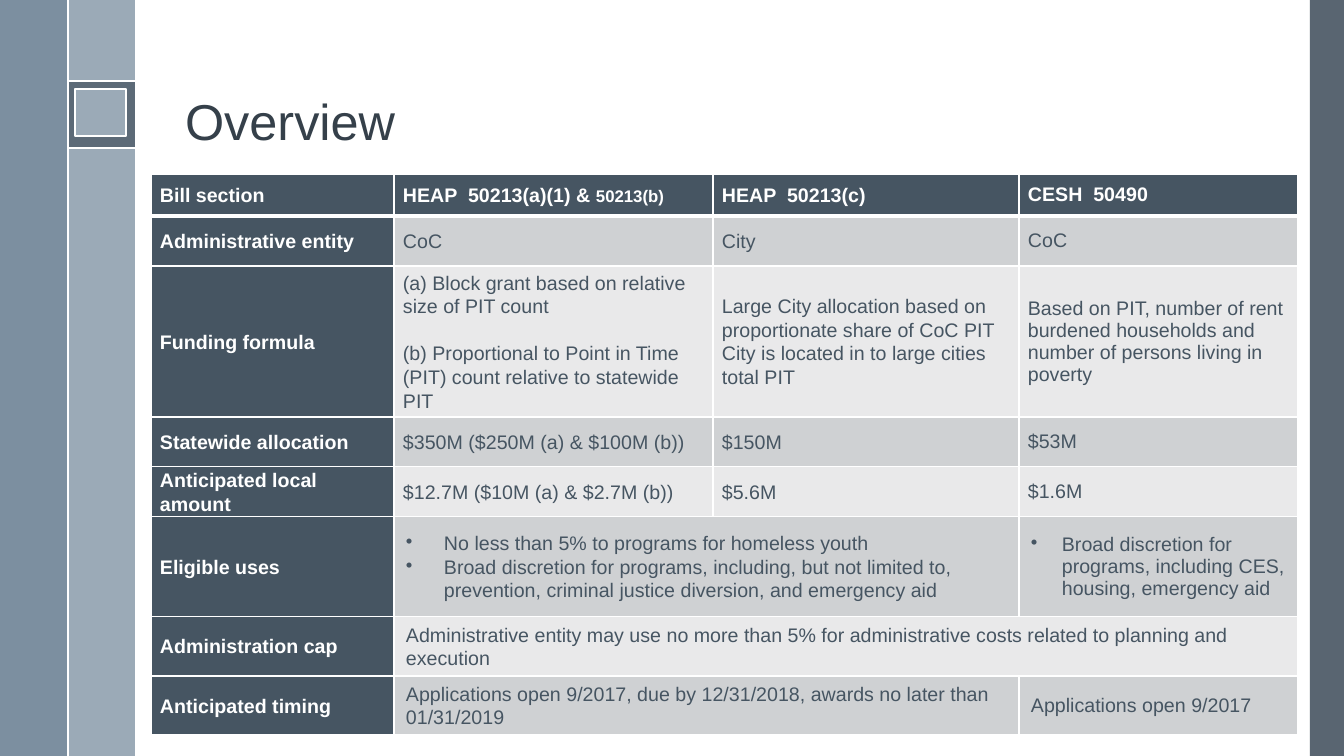
from lxml import etree
from pptx import Presentation
from pptx.dml.color import RGBColor
from pptx.enum.shapes import MSO_CONNECTOR, MSO_SHAPE
from pptx.enum.text import MSO_ANCHOR, MSO_AUTO_SIZE, PP_ALIGN
from pptx.oxml.ns import qn
from pptx.util import Pt

PX = 9071.43  # EMU per px, at 100.8 px to the inch
TITLE_ONLY = 5
RECT = MSO_SHAPE.RECTANGLE
STRAIGHT = MSO_CONNECTOR.STRAIGHT
MIDDLE, BOTTOM = MSO_ANCHOR.MIDDLE, MSO_ANCHOR.BOTTOM
NO_FIT = MSO_AUTO_SIZE.NONE
LEFT = PP_ALIGN.LEFT

WHITE = RGBColor(0xFF, 0xFF, 0xFF)
INK = RGBColor(0x35, 0x40, 0x4A)
SLATE = RGBColor(0x46, 0x55, 0x62)
BAR_DARK = RGBColor(0x47, 0x55, 0x62)
BAR_BLUE = RGBColor(0x6A, 0x80, 0x93)
BAR_LIGHT = RGBColor(0x9B, 0xAA, 0xB7)
BAND_DARK = RGBColor(0xCF, 0xD1, 0xD3)
BAND_LIGHT = RGBColor(0xE9, 0xE9, 0xEA)

COL_WIDTHS = [243, 319, 306, 279]
ROW_HEIGHTS = [42, 50, 151, 50, 50, 100, 59, 59]
FIRST_ROOMY_ROW = 5  # from here on, value cells have wider margins
BULLET_ROW = 5
# None continues the cell to its left
ROWS = [
    ["Bill section", "HEAP  50213(a)(1) & ", "HEAP  50213(c)", "CESH  50490"],
    ["Administrative entity", "CoC", "City", "CoC"],
    ["Funding formula",
     "(a) Block grant based on relative size of PIT count\n"
     "(b) Proportional to Point in Time (PIT) count relative to statewide PIT",
     "Large City allocation based on proportionate share of CoC PIT City is "
     "located in to large cities total PIT",
     "Based on PIT, number of rent burdened households and number of persons "
     "living in poverty"],
    ["Statewide allocation", "$350M ($250M (a) & $100M (b))", "$150M", "$53M"],
    ["Anticipated local amount", "$12.7M ($10M (a) & $2.7M (b))", "$5.6M", "$1.6M"],
    ["Eligible uses",
     "No less than 5% to programs for homeless youth\n"
     "Broad discretion for programs, including, but not limited to, "
     "prevention, criminal justice diversion, and emergency aid",
     None,
     "Broad discretion for programs, including CES, housing, emergency aid"],
    ["Administration cap",
     "Administrative entity may use no more than 5% for administrative costs "
     "related to planning and execution", None, None],
    ["Anticipated timing",
     "Applications open 9/2017, due by 12/31/2018, awards no later than "
     "01/31/2019", None, "Applications open 9/2017"],
]


def px(n):
    return round(n * PX)


class Deck:
    def __init__(self, width, height, font):
        self.prs = Presentation()
        self.prs.slide_width, self.prs.slide_height = px(width), px(height)
        self.font = font
        self.slide = self.prs.slides.add_slide(self.prs.slide_layouts[TITLE_ONLY])

    def style(self, p, size, color, bold=False, spacing=1.0):
        p.alignment, p.line_spacing = LEFT, spacing
        p.font.name, p.font.size = self.font, Pt(size)
        p.font.color.rgb, p.font.bold = color, bold

    def title(self, text, x, y, w, h):
        sp = self.slide.shapes.title
        sp.left, sp.top, sp.width, sp.height = map(px, (x, y, w, h))
        tf = sp.text_frame
        tf.text, tf.auto_size = text, NO_FIT
        tf.vertical_anchor = BOTTOM
        self.style(tf.paragraphs[0], 36, INK, spacing=0.9)

    def rect(self, x, y, w, h, color, opacity=100, outline=None):
        sp = self.slide.shapes.add_shape(RECT, *map(px, (x, y, w, h)))
        sp.shadow.inherit = False
        sp.fill.solid()
        sp.fill.fore_color.rgb = color
        if opacity < 100:
            clr = sp._element.spPr.find(".//" + qn("a:srgbClr"))
            etree.SubElement(clr, qn("a:alpha"), val=str(opacity * 1000))
        if outline:
            sp.line.color.rgb, sp.line.width = outline, Pt(1)
        else:
            sp.line.fill.background()

    def line(self, x1, y1, x2, y2):
        sp = self.slide.shapes.add_connector(STRAIGHT, *map(px, (x1, y1, x2, y2)))
        sp.line.color.rgb, sp.line.width = WHITE, Pt(1.5)
        etree.SubElement(sp._element.spPr, qn("a:effectLst"))

    def table(self, x, y, rows, widths, heights):
        frame = self.slide.shapes.add_table(
            len(rows), len(widths), *map(px, (x, y, sum(widths), sum(heights))))
        table = frame.table
        table.first_row = table.horz_banding = False
        for column, width in zip(table.columns, widths):
            column.width = px(width)
        for row, height in zip(table.rows, heights):
            row.height = px(height)
        for r, row in enumerate(rows):
            for c, text in enumerate(row):
                self.cell(table.cell(r, c), r, c, text)
            for c, text in enumerate(row):
                span = 1
                while c + span < len(row) and row[c + span] is None:
                    span += 1
                if text is not None and span > 1:
                    table.cell(r, c).merge(table.cell(r, c + span - 1))
        return table

    def cell(self, cell, r, c, text):
        heading = r == 0 or c == 0
        roomy = r >= FIRST_ROOMY_ROW and c > 0
        band = BAND_DARK if r % 2 else BAND_LIGHT
        cell.fill.solid()
        cell.fill.fore_color.rgb = SLATE if heading else band
        cell.vertical_anchor = MIDDLE
        cell.margin_left = cell.margin_right = px(12 if roomy else 9)
        cell.margin_top = cell.margin_bottom = px(6 if roomy else 0)
        self.borders(cell, top=3 if r == 1 else 1, bottom=3 if r == 0 else 1)
        if text is None:
            return
        last_column = c == len(COL_WIDTHS) - 1
        cell.text = text
        for p in cell.text_frame.paragraphs:
            self.style(p, 14, WHITE if heading else SLATE, heading,
                       1.0 if last_column else 1.07)
            if r == BULLET_ROW and c > 0:
                self.bullet(p, 31 if last_column else 38)

    def borders(self, cell, top, bottom):
        tcPr = cell._tc.get_or_add_tcPr()
        sides = [("L", 1), ("R", 1), ("T", top), ("B", bottom)]
        for i, (side, width) in enumerate(sides):
            ln = etree.Element(qn("a:ln" + side), w=str(Pt(width)))
            fill = etree.SubElement(ln, qn("a:solidFill"))
            etree.SubElement(fill, qn("a:srgbClr"), val=str(WHITE))
            tcPr.insert(i, ln)

    def bullet(self, p, indent):
        pPr = p._p.get_or_add_pPr()
        pPr.set("marL", str(px(indent)))
        pPr.set("indent", str(-px(indent)))
        mark = etree.Element(qn("a:buChar"), char="•")
        pPr.find(qn("a:defRPr")).addprevious(mark)


def main():
    deck = Deck(1344, 756, "Arial")
    deck.rect(1310, 0, 34, 756, BAR_DARK, 90)
    deck.rect(68, 0, 67, 756, BAR_LIGHT)
    deck.rect(0, 0, 68, 756, BAR_BLUE, 88)
    deck.rect(68, 81, 67, 67, BAR_DARK, 75)
    for y in (81, 148):
        deck.line(68, y, 135, y)
    deck.line(68, 0, 68, 756)
    deck.title("Overview", 175, 19, 1079, 137)
    deck.rect(75, 89, 51, 47, BAR_LIGHT, outline=WHITE)

    table = deck.table(151, 174, ROWS, COL_WIDTHS, ROW_HEIGHTS)
    run = table.cell(0, 1).text_frame.paragraphs[0].add_run()
    run.text, run.font.size = "50213(b)", Pt(12)
    table.cell(2, 1).text_frame.paragraphs[1].space_before = Pt(17)

    deck.prs.save("out.pptx")


if __name__ == "__main__":
    main()
